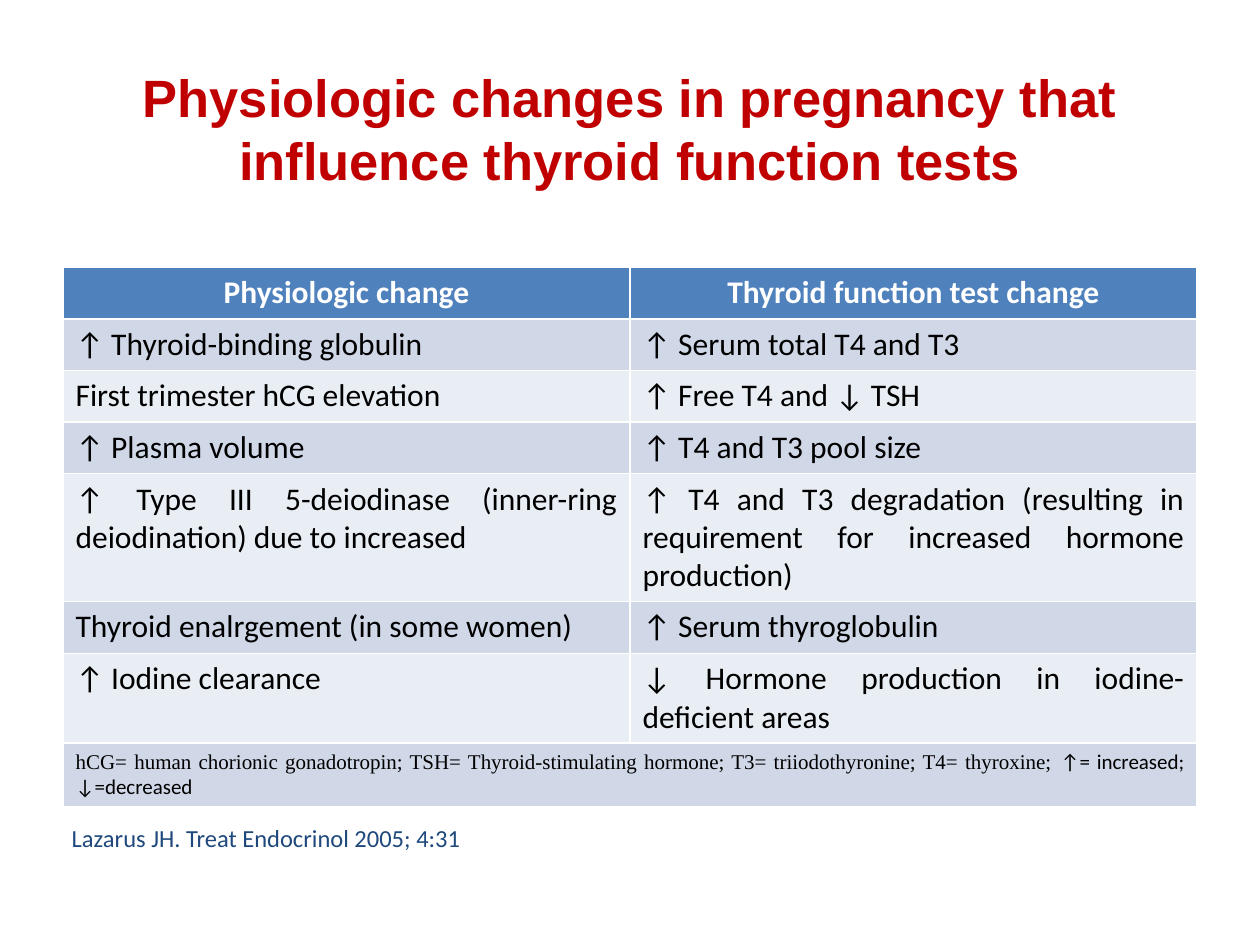
from pptx import Presentation
from pptx.dml.color import RGBColor
from pptx.enum.text import MSO_ANCHOR, PP_ALIGN
from pptx.util import Inches, Pt

CENTER, JUSTIFY = PP_ALIGN.CENTER, PP_ALIGN.JUSTIFY
MIDDLE = MSO_ANCHOR.MIDDLE

COLORS = {
    "title": "C00000",
    "header": "4F81BD",
    "header text": "FFFFFF",
    "odd row": "D0D8E8",
    "even row": "E9EDF4",
    "text": "000000",
    "citation": "1F497D",
}

TITLE = "Physiologic changes in pregnancy that influence thyroid function tests"
HEADER = ("Physiologic change", "Thyroid function test change")
CHANGES = [
    ("↑ Thyroid-binding globulin", "↑ Serum total T4 and T3"),
    ("First trimester hCG elevation", "↑ Free T4 and ↓ TSH"),
    ("↑ Plasma volume", "↑ T4 and T3 pool size"),
    ("↑ Type III 5-deiodinase (inner-ring deiodination) due to increased",
     "↑ T4 and T3 degradation (resulting in requirement for increased "
     "hormone production)"),
    ("Thyroid enalrgement (in some women)", "↑ Serum thyroglobulin"),
    ("↑ Iodine clearance", "↓ Hormone production in iodine-deficient areas"),
]
LEGEND = [
    ("hCG= human chorionic gonadotropin; TSH= Thyroid-stimulating hormone; "
     "T3= triiodothyronine; T4= thyroxine; ", "Times New Roman"),
    ("↑= increased; ↓=decreased", "Calibri"),
]
CITATION = "Lazarus JH. Treat Endocrinol 2005; 4:31"


def format_run(run, size, color, font="Calibri", bold=False):
    run.font.size = Pt(size)
    run.font.name = font
    run.font.bold = bold
    run.font.color.rgb = RGBColor.from_string(COLORS[color])


def fill_cell(cell, color):
    cell.fill.solid()
    cell.fill.fore_color.rgb = RGBColor.from_string(COLORS[color])


def add_title(slide):
    title = slide.shapes.title
    title.left, title.top = Inches(0.5), Inches(0.39)
    title.width, title.height = Inches(9), Inches(1.25)
    title.text_frame.text = TITLE
    title.text_frame.vertical_anchor = MIDDLE
    paragraph = title.text_frame.paragraphs[0]
    paragraph.alignment = CENTER
    format_run(paragraph.runs[0], 30, "title", "Arial", bold=True)


def add_changes_table(slide):
    rows = [HEADER, *CHANGES]
    row_height = Inches(0.41)
    table = slide.shapes.add_table(
        len(rows) + 1, len(HEADER), Inches(0.5), Inches(2.12),
        Inches(9), row_height * (len(rows) + 1)).table

    for r, row in enumerate(rows):
        is_header = r == 0
        band = "header" if is_header else "odd row" if r % 2 else "even row"
        for c, wording in enumerate(row):
            cell = table.cell(r, c)
            fill_cell(cell, band)
            cell.text_frame.text = wording
            paragraph = cell.text_frame.paragraphs[0]
            paragraph.alignment = CENTER if is_header else JUSTIFY
            format_run(paragraph.runs[0], 18,
                       "header text" if is_header else "text", bold=is_header)

    legend = table.cell(len(rows), 0)
    legend.merge(table.cell(len(rows), len(HEADER) - 1))
    fill_cell(legend, "odd row")
    paragraph = legend.text_frame.paragraphs[0]
    paragraph.alignment = JUSTIFY
    for wording, font in LEGEND:
        run = paragraph.add_run()
        run.text = wording
        format_run(run, 12, "text", font)


def add_citation(slide):
    citation = slide.shapes.add_textbox(
        Inches(0.47), Inches(6.48), Inches(3.41), Inches(0.34))
    citation.text_frame.text = CITATION
    format_run(citation.text_frame.paragraphs[0].runs[0], 14, "citation")


def main():
    presentation = Presentation()
    presentation.slide_width = Inches(10)
    presentation.slide_height = Inches(7.5)
    title_only = presentation.slide_layouts[5]
    slide = presentation.slides.add_slide(title_only)
    add_title(slide)
    add_changes_table(slide)
    add_citation(slide)
    presentation.save("out.pptx")


if __name__ == "__main__":
    main()
